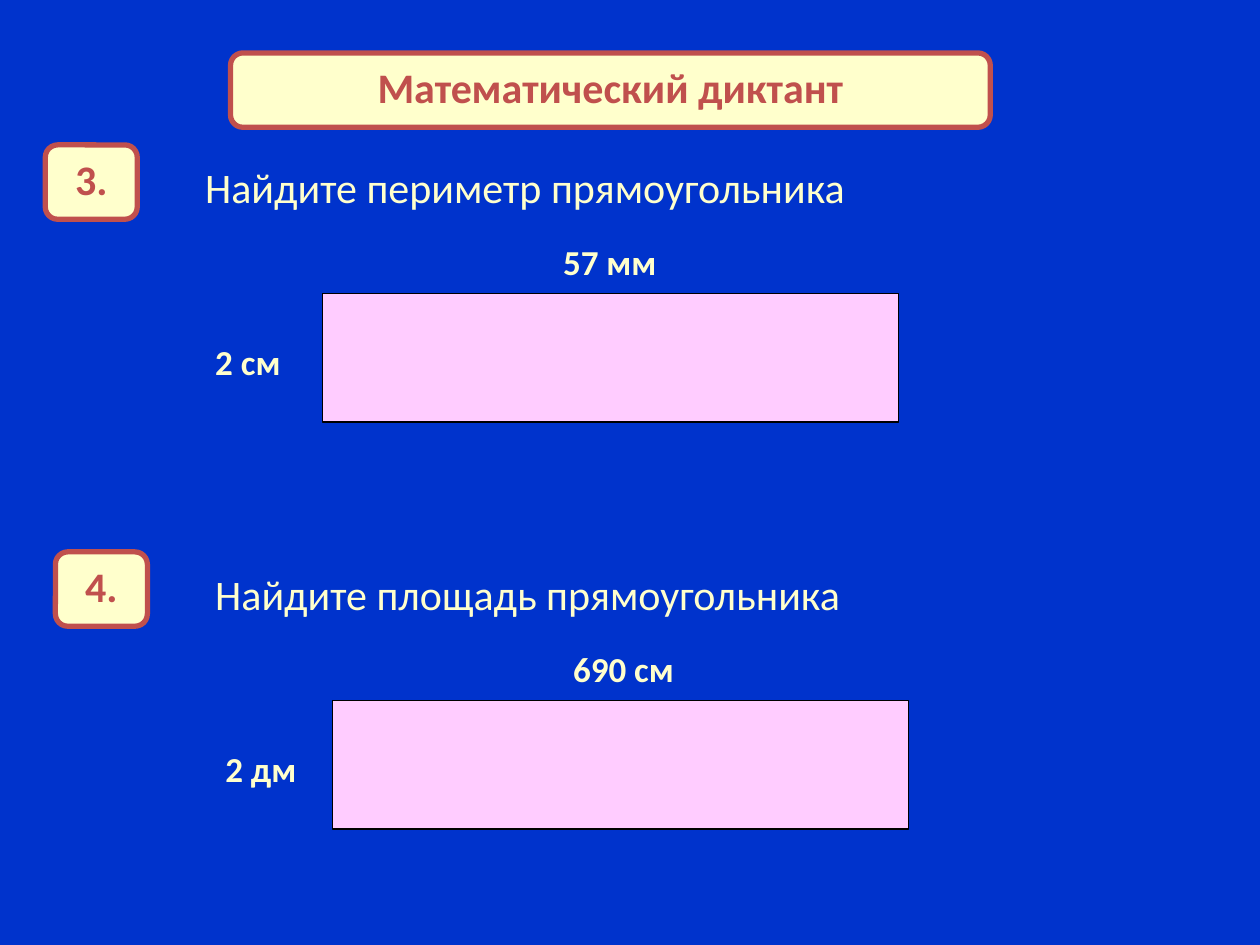
from pptx import Presentation
from pptx.dml.color import RGBColor
from pptx.enum.shapes import MSO_SHAPE as Preset
from pptx.enum.text import MSO_ANCHOR as Anchor, PP_ALIGN as Align
from pptx.util import Inches, Pt

# Content: each task has the left and top of its number badge
TITLE = "Математический диктант"
TASKS = [
    {"number": "3.", "question": "Найдите периметр прямоугольника",
     "width": "57 мм", "height": "2 см", "at": (0.36, 1.15)},
    {"number": "4.", "question": "Найдите площадь прямоугольника",
     "width": "690 см", "height": "2 дм", "at": (0.44, 4.38)},
]

BLUE = RGBColor(0x00, 0x33, 0xCC)
CREAM = RGBColor(0xFF, 0xFF, 0xCC)
RED = RGBColor(0xC0, 0x50, 0x4D)
PINK = RGBColor(0xFF, 0xCC, 0xFF)
BLACK = RGBColor(0x00, 0x00, 0x00)


def write(shape, text, size=24, color=CREAM, bold=False, align=Align.LEFT):
    frame = shape.text_frame
    frame.word_wrap = True
    frame.vertical_anchor = Anchor.TOP
    paragraph = frame.paragraphs[0]
    paragraph.alignment = align
    run = paragraph.add_run()
    run.text = text
    font = run.font
    font.name, font.size, font.bold = "Calibri", Pt(size), bold
    font.color.rgb = color


def add_box(slide, preset, place, fill, line, weight):
    shape = slide.shapes.add_shape(preset, *map(Inches, place))
    shape.shadow.inherit = False
    shape.fill.solid()
    shape.fill.fore_color.rgb = fill
    shape.line.color.rgb = line
    shape.line.width = Pt(weight)
    return shape


def add_badge(slide, text, place):
    badge = add_box(slide, Preset.ROUNDED_RECTANGLE, place, CREAM, RED, 3)
    badge.text_frame.margin_top = Inches(0.04)
    write(badge, text, color=RED, bold=True, align=Align.CENTER)


def add_label(slide, text, place, **style):
    write(slide.shapes.add_textbox(*map(Inches, place)), text, **style)


def add_task(slide, task):
    left, top = task["at"]
    add_label(slide, task["question"], (left + 1.17, top + 0.08, 7.25, 0.5))
    add_box(slide, Preset.RECTANGLE, (left + 2.2, top + 1.18, 4.57, 1.02),
            PINK, BLACK, 0.75)
    for side, dx, dy in (("width", 4.01, 0.71), ("height", 1.25, 1.5)):
        add_label(slide, task[side], (left + dx, top + dy, 1.65, 0.43),
                  size=20, bold=True)
    add_badge(slide, task["number"], (left, top, 0.73, 0.59))


def main():
    presentation = Presentation()
    presentation.slide_width = Inches(10)
    presentation.slide_height = Inches(7.5)
    slide = presentation.slides.add_slide(presentation.slide_layouts[6])
    slide.background.fill.solid()
    slide.background.fill.fore_color.rgb = BLUE

    # Title, then the two tasks
    add_badge(slide, TITLE, (1.83, 0.42, 6.03, 0.59))
    for task in TASKS:
        add_task(slide, task)
    presentation.save("out.pptx")


if __name__ == "__main__":
    main()
